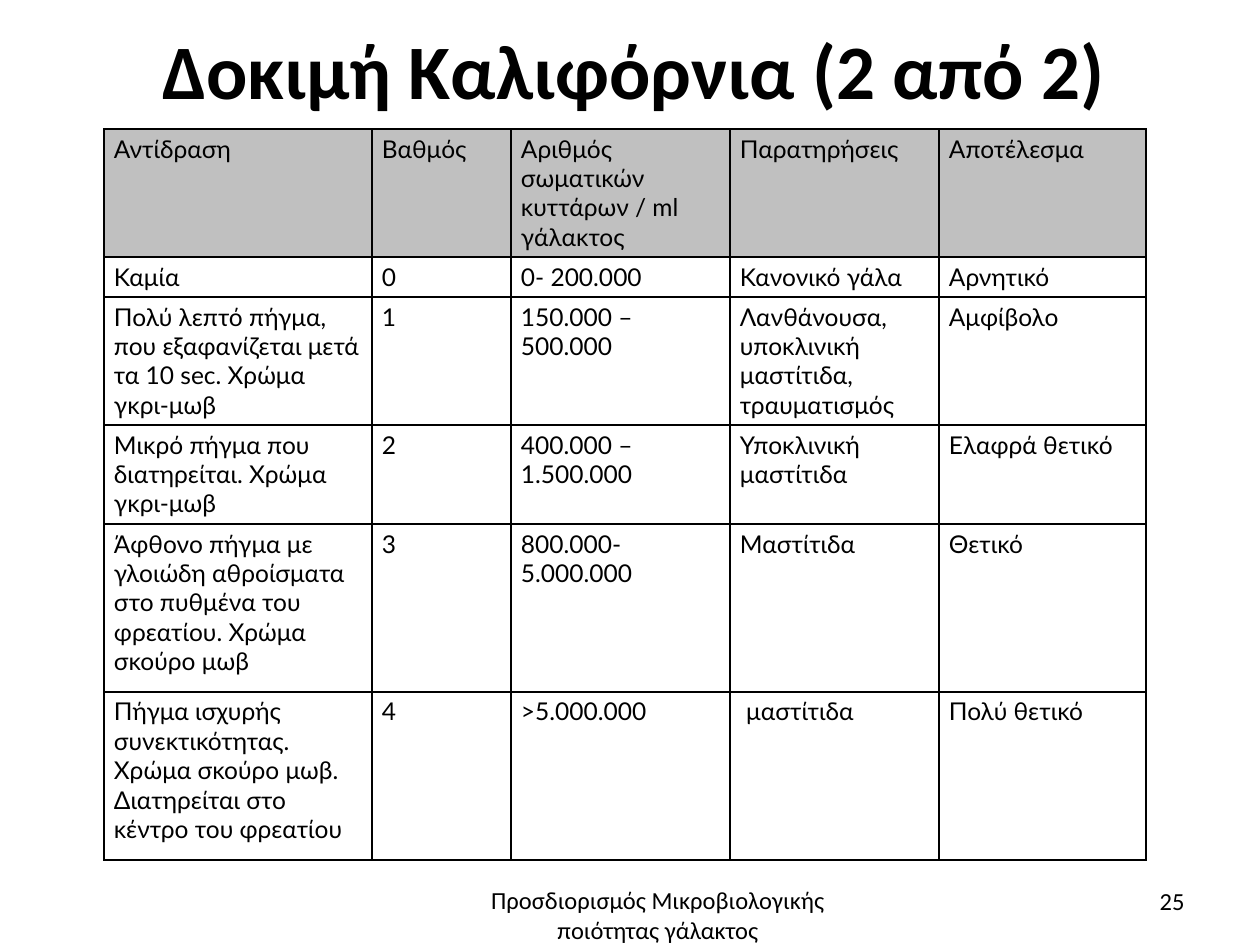
from lxml.etree import SubElement as Sub
from pptx import Presentation
from pptx.dml.color import RGBColor as RGB
from pptx.enum.text import MSO_ANCHOR as Anchor, PP_ALIGN as Align
from pptx.oxml.ns import qn
from pptx.util import Emu, Pt

SCALE = 914400 / 126
INK = {"text": "000000", "line": "000000", "head": "C0C0C0"}
COLS = [268, 139, 219, 209, 207]
ROWS = [128, 40, 128, 99, 168, 168]
GRADES = [
    ["Αντίδραση", "Βαθμός", "Αριθμός σωματικών κυττάρων / ml γάλακτος",
     "Παρατηρήσεις", "Αποτέλεσμα"],
    ["Καμία", "0", "0- 200.000", "Κανονικό γάλα", "Αρνητικό"],
    ["Πολύ λεπτό πήγμα, που εξαφανίζεται μετά τα 10 sec. Χρώμα γκρι-μωβ",
     "1", "150.000 – 500.000",
     "Λανθάνουσα, υποκλινική μαστίτιδα, τραυματισμός", "Αμφίβολο"],
    ["Μικρό πήγμα που διατηρείται. Χρώμα γκρι-μωβ", "2",
     "400.000 – 1.500.000", "Υποκλινική μαστίτιδα", "Ελαφρά θετικό"],
    ["Άφθονο πήγμα με γλοιώδη αθροίσματα στο πυθμένα του φρεατίου. "
     "Χρώμα σκούρο μωβ", "3", "800.000-\n5.000.000", "Μαστίτιδα", "Θετικό"],
    ["Πήγμα ισχυρής συνεκτικότητας.\n"
     "Χρώμα σκούρο μωβ. Διατηρείται στο κέντρο του φρεατίου", "4",
     ">5.000.000", " μαστίτιδα", "Πολύ θετικό"],
]


def px(n):
    return Emu(round(n * SCALE))


def write(frame, text, font, size=14, bold=False, align=Align.LEFT, gap=None):
    """Fill a text frame, one paragraph for each line of text."""
    frame.word_wrap = True
    for i, line in enumerate(text.split("\n")):
        para = frame.add_paragraph() if i else frame.paragraphs[0]
        para.alignment = align
        para.line_spacing = gap
        run = para.add_run()
        run.text = line
        run.font.name, run.font.size, run.font.bold = font, Pt(size), bold
        run.font.color.rgb = RGB.from_string(INK["text"])


def add_text(slide, box, text, anchor=Anchor.TOP, pads=None, **style):
    frame = slide.shapes.add_textbox(*map(px, box)).text_frame
    frame.vertical_anchor = anchor
    if pads:
        (frame.margin_left, frame.margin_top,
         frame.margin_right, frame.margin_bottom) = map(px, pads)
    write(frame, text, "Calibri", **style)


def add_edges(cell):
    props = cell._tc.get_or_add_tcPr()
    for side in "LRTB":
        line = Sub(props, qn("a:ln" + side), w=str(Pt(1)))
        Sub(Sub(line, qn("a:solidFill")), qn("a:srgbClr"), val=INK["line"])


def add_grid(slide, left, top):
    table = slide.shapes.add_table(
        len(ROWS), len(COLS), px(left), px(top),
        px(sum(COLS)), px(sum(ROWS))).table
    table.first_row = table.horz_banding = False
    for col, width in zip(table.columns, COLS):
        col.width = px(width)
    for r, (row, height) in enumerate(zip(table.rows, ROWS)):
        row.height = px(height)
        for cell, text in zip(row.cells, GRADES[r]):
            cell.margin_left = cell.margin_right = px(10)
            cell.margin_top = cell.margin_bottom = px(5)
            write(cell.text_frame, text, "Lato")
            add_edges(cell)
            if r:
                cell.fill.background()
            else:
                cell.fill.solid()
                cell.fill.fore_color.rgb = RGB.from_string(INK["head"])


def main():
    deck = Presentation()
    deck.slide_width, deck.slide_height = px(1260), px(945)
    slide = deck.slides.add_slide(deck.slide_layouts[6])
    add_text(slide, (54, 6, 1160, 139), "Δοκιμή Καλιφόρνια (2 από 2)",
             Anchor.MIDDLE, (0, 3, 0, 0), size=44, bold=True,
             align=Align.CENTER, gap=0.8)
    add_grid(slide, 104, 129)
    add_text(slide, (438, 879, 440, 69),
             "Προσδιορισμός Μικροβιολογικής ποιότητας γάλακτος",
             align=Align.CENTER)
    add_text(slide, (903, 876, 294, 50), "25", Anchor.MIDDLE,
             align=Align.RIGHT)
    deck.save("out.pptx")


if __name__ == "__main__":
    main()
